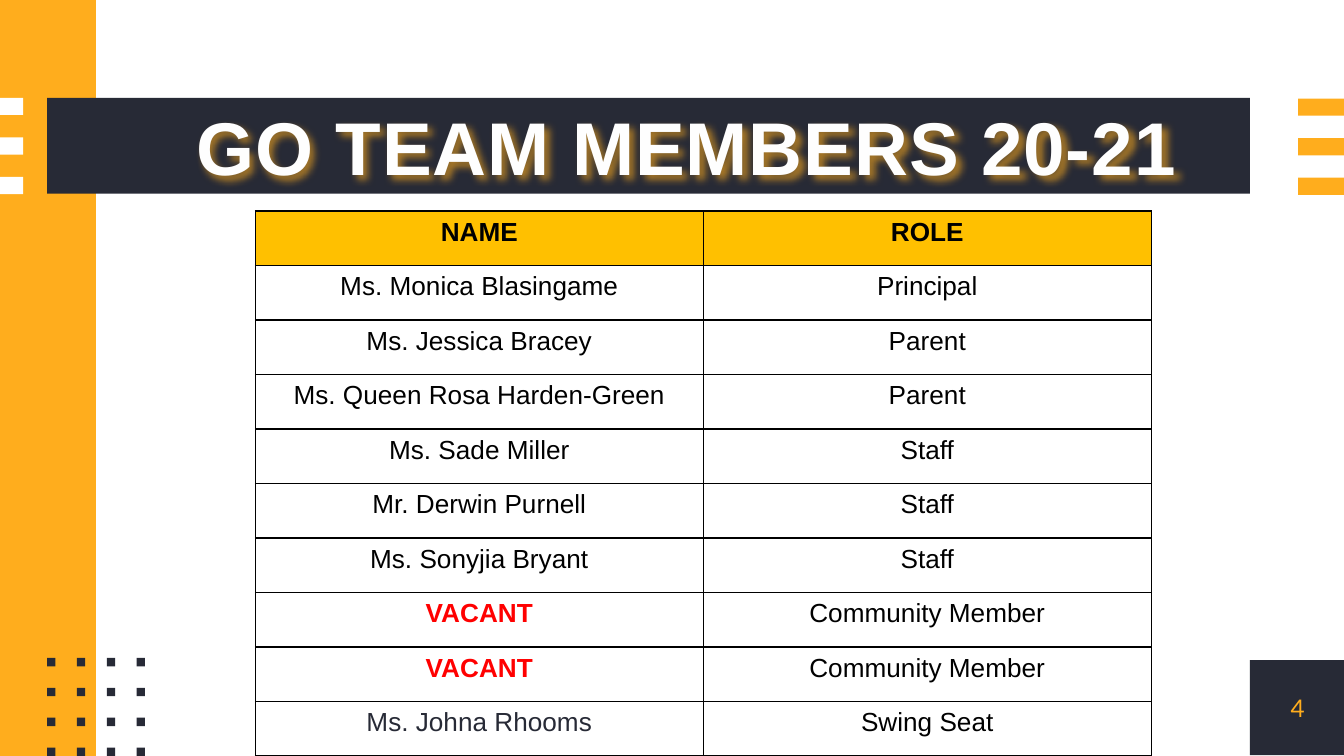
from lxml import etree
from pptx import Presentation
from pptx.dml.color import RGBColor
from pptx.enum.shapes import MSO_SHAPE
from pptx.enum.text import MSO_ANCHOR, PP_ALIGN
from pptx.oxml import parse_xml
from pptx.oxml.ns import qn
from pptx.util import Pt

RECT = MSO_SHAPE.RECTANGLE
CENTER = PP_ALIGN.CENTER
MIDDLE = MSO_ANCHOR.MIDDLE
NS = 'xmlns:a="http://schemas.openxmlformats.org/drawingml/2006/main"'

COLORS = {
    "navy": "272A36",
    "amber": "FFAD1D",
    "gold": "FFC000",
    "white": "FFFFFF",
    "title": "FEFEFE",
    "black": "000000",
    "red": "FF0000",
}

MEMBERS = [
    ("NAME", "ROLE"),
    ("Ms. Monica Blasingame", "Principal"),
    ("Ms. Jessica Bracey", "Parent"),
    ("Ms. Queen Rosa Harden-Green", "Parent"),
    ("Ms. Sade Miller", "Staff"),
    ("Mr. Derwin Purnell", "Staff"),
    ("Ms. Sonyjia Bryant", "Staff"),
    ("VACANT", "Community Member"),
    ("VACANT", "Community Member"),
    ("Ms. Johna Rhooms", "Swing Seat"),
]


def add_block(slide, left, top, width, height, color):
    block = slide.shapes.add_shape(RECT, Pt(left), Pt(top), Pt(width), Pt(height))
    block.shadow.inherit = False
    block.fill.solid()
    block.fill.fore_color.rgb = RGBColor.from_string(COLORS[color])
    block.line.fill.background()
    return block


def write(frame, text, color, **formats):
    paragraph = frame.paragraphs[0]
    paragraph.alignment = CENTER
    run = paragraph.add_run()
    run.text = text
    for name, value in formats.items():
        setattr(run.font, name, value)
    run.font.color.rgb = RGBColor.from_string(COLORS[color])
    return run


def add_stripes(slide, left, top, width, color):
    for i in range(3):
        add_block(slide, left, top + i * 21.2, width, 9.2, color)


def add_dots(slide, left, top, pitch=16, side=4.5):
    for row in range(4):
        for column in range(4):
            add_block(slide, left + column * pitch, top + row * pitch, side, side, "navy")


def add_page_number(slide, left, top, side):
    corner = add_block(slide, left, top, side, side, "navy")
    frame = corner.text_frame
    margins = ("margin_left", "margin_top", "margin_right", "margin_bottom")
    for name in margins:
        setattr(frame, name, 0)
    frame.vertical_anchor = MIDDLE
    write(frame, "4", "amber", name="Lato", size=Pt(13))


def add_title(slide, left, top, width, height):
    title = slide.shapes.add_textbox(Pt(left), Pt(top), Pt(width), Pt(height))
    title.text_frame.word_wrap = False
    run = write(title.text_frame, "GO TEAM MEMBERS 20-21", "title",
                name="Arial", size=Pt(40), bold=True)
    properties = run.font._element
    properties.set("spc", "50")
    amber = COLORS["amber"]
    properties.insert(0, parse_xml(
        f'<a:ln {NS} w="{Pt(0.75)}"><a:solidFill><a:srgbClr val="{amber}"/>'
        '</a:solidFill></a:ln>'))
    title._element.spPr.append(parse_xml(
        f'<a:effectLst {NS}><a:outerShdw blurRad="{Pt(4)}" dist="{Pt(3)}" dir="2700000">'
        f'<a:srgbClr val="{amber}"><a:alpha val="60000"/></a:srgbClr>'
        '</a:outerShdw></a:effectLst>'))


def add_borders(cell):
    properties = cell._tc.get_or_add_tcPr()
    for edge in ("lnL", "lnR", "lnT", "lnB"):
        line = etree.SubElement(properties, qn(f"a:{edge}"), w=str(Pt(0.75)))
        fill = etree.SubElement(line, qn("a:solidFill"))
        etree.SubElement(fill, qn("a:srgbClr"), val=COLORS["black"])


def add_members(slide, left, top, width, height):
    table = slide.shapes.add_table(
        len(MEMBERS), 2, Pt(left), Pt(top), Pt(width), Pt(height)).table
    table.first_row = False
    table.horz_banding = False
    for row in table.rows:
        row.height = Pt(height / len(MEMBERS))
    special = {"VACANT": "red", "Ms. Johna Rhooms": "navy"}
    for r, member in enumerate(MEMBERS):
        for c, text in enumerate(member):
            cell = table.cell(r, c)
            add_borders(cell)
            if r == 0:
                cell.fill.solid()
                cell.fill.fore_color.rgb = RGBColor.from_string(COLORS["gold"])
            else:
                cell.fill.background()
            write(cell.text_frame, text, special.get(text, "black"), name="Arial",
                  size=Pt(14), bold=r == 0 or text == "VACANT")


def main():
    deck = Presentation()
    deck.slide_width, deck.slide_height = Pt(720), Pt(405)
    slide = deck.slides.add_slide(deck.slide_layouts[6])
    add_block(slide, 0, 0, 51.4, 405, "amber")
    add_block(slide, 25.2, 52.4, 644.4, 51.4, "navy")
    add_stripes(slide, 0, 52.4, 12.4, "white")
    add_stripes(slide, 695.4, 52.8, 24.6, "amber")
    add_dots(slide, 25.2, 352.5)
    add_page_number(slide, 669.6, 353.6, 51)
    add_title(slide, 95, 50.4, 545.8, 55.4)
    add_members(slide, 136.8, 113, 480, 292)
    deck.save("out.pptx")


if __name__ == "__main__":
    main()
